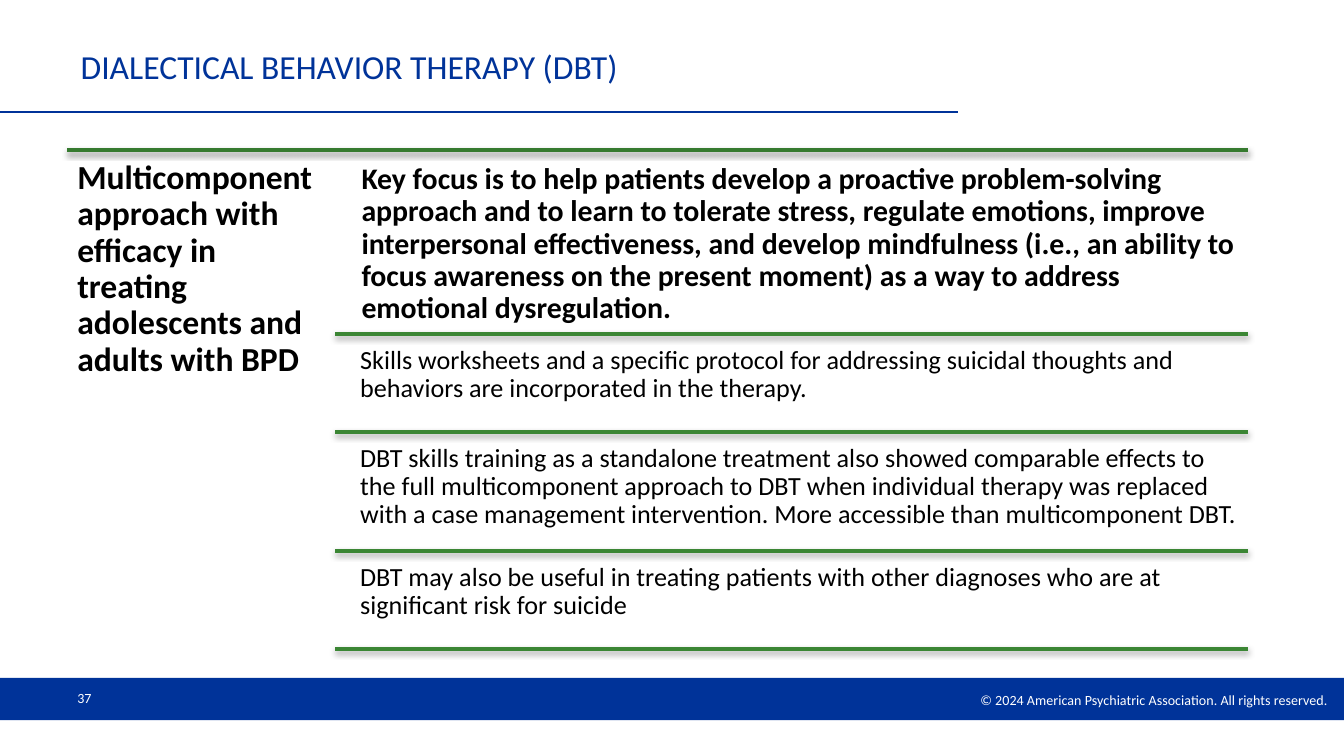
from lxml.etree import SubElement
from pptx import Presentation
from pptx.dml.color import RGBColor
from pptx.enum.shapes import MSO_CONNECTOR as Conn, MSO_SHAPE as Kind
from pptx.enum.text import MSO_ANCHOR as Anchor, PP_ALIGN as Align
from pptx.oxml.ns import qn
from pptx.util import Pt

SCALE = 4572
BLUE = RGBColor(0x00, 0x33, 0x99)
MOSS = RGBColor(0x36, 0x7A, 0x2F)
GREEN = RGBColor(0x3B, 0x86, 0x34)
BLACK = RGBColor(0x00, 0x00, 0x00)
WHITE = RGBColor(0xFF, 0xFF, 0xFF)

RIGHT = 1857
ROWS = [
    (230, 266, 497, 16, True, 14,
     "Key focus is to help patients develop a proactive problem-solving approach "
     "and to learn to tolerate stress, regulate emotions, improve interpersonal "
     "effectiveness, and develop mindfulness (i.e., an ability to focus awareness "
     "on the present moment) as a way to address emotional dysregulation."),
    (504, 140, 643, 14, False, 12,
     "Skills worksheets and a specific protocol for addressing suicidal thoughts "
     "and behaviors are incorporated in the therapy."),
    (650, 170, 820, 14, False, 12,
     "DBT skills training as a standalone treatment also showed comparable effects "
     "to the full multicomponent approach to DBT when individual therapy was "
     "replaced with a case management intervention. More accessible than "
     "multicomponent DBT."),
    (827, 140, 966, 14, False, 12,
     "DBT may also be useful in treating patients with other diagnoses who are at "
     "significant risk for suicide"),
]


def px(n):
    return int(n * SCALE)


def apply(item, values):
    for name, value in values.items():
        setattr(item, name, value)


def place(shape, left, top, width, height):
    apply(shape, {"left": px(left), "top": px(top),
                  "width": px(width), "height": px(height)})


def write(shape, text, size, color, bold=False, pad=(20, 10, 20, 10),
          anchor=Anchor.TOP, align=Align.LEFT, space=1.0):
    frame = shape.text_frame
    sides = ("margin_left", "margin_top", "margin_right", "margin_bottom")
    apply(frame, {"word_wrap": True, "vertical_anchor": anchor})
    apply(frame, {side: px(n) for side, n in zip(sides, pad)})
    frame.text = text
    para = frame.paragraphs[0]
    apply(para, {"alignment": align, "line_spacing": space})
    font = para.runs[0].font
    apply(font, {"name": "Calibri", "size": Pt(size), "bold": bold})
    font.color.rgb = color


def add_text(slide, box, text, size, color, **style):
    shape = slide.shapes.add_textbox(*map(px, box))
    write(shape, text, size, color, **style)


def add_rule(slide, left, right, top, color, width, shade=False):
    line = slide.shapes.add_connector(
        Conn.STRAIGHT, px(left), px(top), px(right), px(top))
    line.line.color.rgb = color
    line.line.width = Pt(width)
    effect = SubElement(line._element.spPr, qn("a:effectLst"))
    if shade:
        cast = SubElement(effect, qn("a:outerShdw"), blurRad=str(Pt(3.1)),
                          dist=str(Pt(1.6)), dir="5400000", rotWithShape="0")
        tint = SubElement(cast, qn("a:srgbClr"), val=str(BLACK))
        SubElement(tint, qn("a:alpha"), val="38000")


def add_frame(slide):
    band = slide.shapes.add_shape(Kind.RECTANGLE, *map(px, (0, 1009, 2000, 63)))
    band.shadow.inherit = False
    band.fill.solid()
    band.fill.fore_color.rgb = BLUE
    band.line.fill.background()
    add_rule(slide, 0, 1426, 167, BLUE, 0.75)
    add_text(slide, (1126, 1018, 874, 46),
             "© 2024 American Psychiatric Association. All rights reserved. ",
             7.5, WHITE, anchor=Anchor.MIDDLE, align=Align.RIGHT)
    add_text(slide, (100, 1009, 466, 60), "37", 7.5, WHITE,
             pad=(15, 8, 15, 8), anchor=Anchor.MIDDLE)


def add_title(slide):
    title = slide.shapes.title
    place(title, 100, 50, 1326, 96)
    write(title, "DIALECTICAL BEHAVIOR THERAPY (DBT)", 18, BLUE,
          anchor=Anchor.MIDDLE)


def add_rows(slide):
    add_rule(slide, 100, RIGHT, 223, MOSS, 2, shade=True)
    add_text(slide, (100, 224, 400, 750),
             "Multicomponent approach with efficacy in treating adolescents "
             "and adults with BPD", 18, BLACK, bold=True, pad=(15,) * 4, space=0.9)
    for top, height, rule, size, bold, pad, text in ROWS:
        add_text(slide, (524, top, 1332, height), text, size, BLACK,
                 bold=bold, pad=(pad,) * 4, space=0.9)
        add_rule(slide, 499, RIGHT, rule, GREEN, 2, shade=True)


def main():
    deck = Presentation()
    apply(deck, {"slide_width": px(2000), "slide_height": px(1125)})
    slide = deck.slides.add_slide(deck.slide_layouts[5])
    add_frame(slide)
    add_title(slide)
    add_rows(slide)
    deck.save("out.pptx")


if __name__ == "__main__":
    main()
